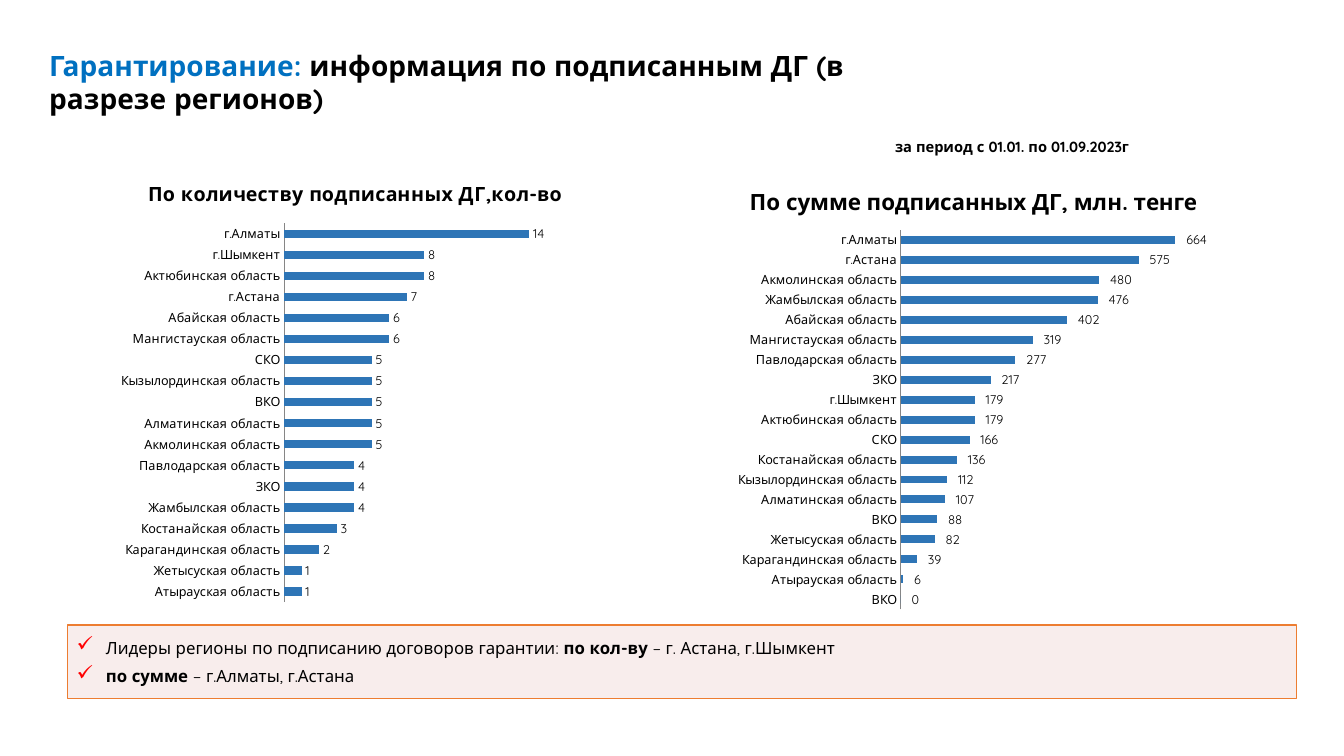
from lxml import etree
from pptx import Presentation
from pptx import util as u
from pptx.chart.data import CategoryChartData
from pptx.dml.color import RGBColor
from pptx.enum import chart as ch, shapes, text
from pptx.oxml import ns

FONT, BLACK, BLUE, BAR = "Quicksand", "000000", "0070C0", "2E75B6"

COUNTS = [
    ("Атырауская область", 1), ("Жетысуская область", 1),
    ("Карагандинская область", 2), ("Костанайская область", 3),
    ("Жамбылская область", 4), ("ЗКО", 4), ("Павлодарская область", 4),
    ("Акмолинская область", 5), ("Алматинская область", 5), ("ВКО", 5),
    ("Кызылординская область", 5), ("СКО", 5),
    ("Мангистауская область", 6), ("Абайская область", 6),
    ("г.Астана", 7), ("Актюбинская область", 8), ("г.Шымкент", 8),
    ("г.Алматы", 14),
]
SUMS = [
    ("ВКО", 0), ("Атырауская область", 6), ("Карагандинская область", 39),
    ("Жетысуская область", 82), ("ВКО", 88), ("Алматинская область", 107),
    ("Кызылординская область", 112), ("Костанайская область", 136),
    ("СКО", 166), ("Актюбинская область", 179), ("г.Шымкент", 179),
    ("ЗКО", 217), ("Павлодарская область", 277),
    ("Мангистауская область", 319), ("Абайская область", 402),
    ("Жамбылская область", 476), ("Акмолинская область", 480),
    ("г.Астана", 575), ("г.Алматы", 664),
]


def rgb(value):
    return RGBColor.from_string(value)


def set_font(font, size, color=BLACK, bold=False):
    font.name, font.size, font.bold = FONT, u.Pt(size), bold
    font.color.rgb = rgb(color)


def add_text(paragraph, content, size=12, color=BLACK, bold=False):
    run = paragraph.add_run()
    run.text = content
    set_font(run.font, size, color, bold)


def add_xml(parent, tag, **attributes):
    return etree.SubElement(parent, ns.qn(tag), attributes)


class RegionSlide:
    def __init__(self, slide):
        self.shapes = slide.shapes

    def label(self, box, runs, size, wrap=True):
        frame = self.shapes.add_textbox(*map(u.Inches, box)).text_frame
        frame.word_wrap = wrap
        for content, color in runs:
            add_text(frame.paragraphs[0], content, size, color, bold=True)

    def check_panel(self, box, points):
        panel = self.shapes.add_shape(
            shapes.MSO_SHAPE.RECTANGLE, *map(u.Inches, box))
        panel.shadow.inherit = False
        panel.fill.solid()
        panel.fill.fore_color.rgb = rgb("F2DCDB")
        fill_color = panel.fill._xPr.find(".//" + ns.qn("a:srgbClr"))
        add_xml(fill_color, "a:alpha", val="50000")
        panel.line.color.rgb = rgb("ED7D31")
        panel.line.width = u.Pt(1)

        frame = panel.text_frame
        frame.word_wrap = True
        frame.vertical_anchor = text.MSO_ANCHOR.MIDDLE
        frame.margin_left = frame.margin_right = u.Inches(0.08)
        frame.margin_top = frame.margin_bottom = u.Inches(0.04)
        for number, runs in enumerate(points):
            paragraph = frame.add_paragraph() if number else frame.paragraphs[0]
            self.check_mark(paragraph)
            paragraph.alignment = text.PP_ALIGN.LEFT
            paragraph.space_after = u.Pt(6)
            for content, bold in runs:
                add_text(paragraph, content, bold=bold)

    def check_mark(self, paragraph):
        props = paragraph._p.get_or_add_pPr()
        props.set("marL", str(u.Inches(0.3)))
        props.set("indent", str(u.Inches(-0.29)))
        add_xml(add_xml(props, "a:buClr"), "a:srgbClr", val="FF0000")
        add_xml(props, "a:buSzPct", val="125000")
        add_xml(props, "a:buChar", char="✓")

    def bar_chart(self, box, title, title_size, regions, maximum, plot, fmt):
        data = CategoryChartData()
        data.categories = [name for name, _ in regions]
        data.add_series("ДГ", [value for _, value in regions])
        chart = self.shapes.add_chart(
            ch.XL_CHART_TYPE.BAR_CLUSTERED, *map(u.Inches, box), data).chart
        set_font(chart.font, 9)
        chart.has_legend = False
        chart.has_title = True
        add_text(chart.chart_title.text_frame.paragraphs[0], title,
                 title_size, bold=True)
        chart.chart_title.include_in_layout = False

        # Axes
        names, values = chart.category_axis, chart.value_axis
        names.major_tick_mark = ch.XL_TICK_MARK.NONE
        names.format.line.color.rgb = rgb("868686")
        set_font(names.tick_labels.font, 9)
        values.minimum_scale, values.maximum_scale = 0, maximum
        values.has_major_gridlines = False
        values.visible = False

        # Bars and their values
        bars = chart.plots[0]
        bars.gap_width = 150
        bars.vary_by_categories = False
        series = bars.series[0]
        series.format.fill.solid()
        series.format.fill.fore_color.rgb = rgb(BAR)
        labels = series.data_labels
        labels.show_value = True
        labels.position = ch.XL_LABEL_POSITION.OUTSIDE_END
        labels.number_format = fmt
        labels.number_format_is_linked = False
        set_font(labels.font, 9)
        self.place_plot(chart, plot)

    def place_plot(self, chart, plot):
        area = chart._chartSpace.chart.plotArea
        for old in area.findall(ns.qn("c:layout")):
            area.remove(old)
        layout = etree.Element(ns.qn("c:layout"))
        area.insert(0, layout)
        manual = add_xml(layout, "c:manualLayout")
        settings = [("layoutTarget", "inner"), ("xMode", "edge"),
                    ("yMode", "edge"), *zip("xywh", plot)]
        for tag, value in settings:
            add_xml(manual, "c:" + tag, val=str(value))


def main():
    deck = Presentation()
    deck.slide_width, deck.slide_height = u.Inches(13.33), u.Inches(7.5)
    page = RegionSlide(deck.slides.add_slide(deck.slide_layouts[6]))

    # Heading and period
    page.label((0.39, 0.43, 9.14, 0.77), [
        ("Гарантирование: ", BLUE),
        ("информация по подписанным ДГ (в разрезе регионов)", BLACK)], 20)
    page.label((8.78, 1.32, 2.63, 0.28),
               [("за период с 01.01. по 01.09.2023г", BLACK)], 10.5, wrap=False)

    # Leaders
    page.check_panel((0.67, 6.2, 12.19, 0.73), [
        [("Лидеры регионы по подписанию договоров гарантии: ", False),
         ("по кол-ву", True), (" – г. Астана, г.Шымкент", False)],
        [("по сумме ", True), ("– г.Алматы, г.Астана", False)]])

    # Charts by region
    page.bar_chart((0.67, 1.6, 5.71, 4.5),
                   "По количеству подписанных ДГ,кол-во", 14, COUNTS, 16,
                   (0.376, 0.137, 0.487, 0.835), "General")
    page.bar_chart((6.58, 1.66, 6.15, 4.54),
                   "По сумме подписанных ДГ, млн. тенге", 16, SUMS, 700,
                   (0.383, 0.137, 0.467, 0.829), r"_-* #\ ##0_р_._-")
    deck.save("out.pptx")


if __name__ == "__main__":
    main()
